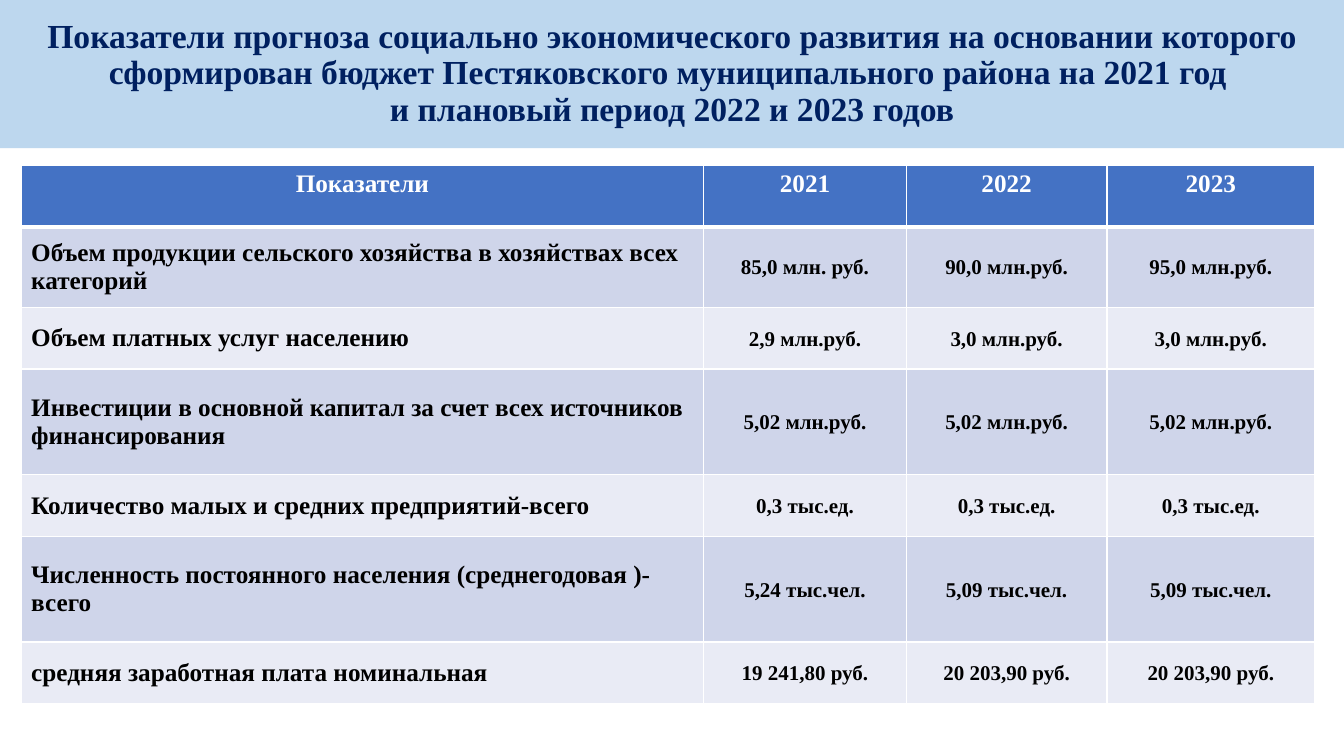
from dataclasses import dataclass

from lxml import etree
from pptx import Presentation
from pptx.dml.color import RGBColor
from pptx.enum.shapes import MSO_SHAPE
from pptx.enum.text import MSO_ANCHOR, PP_ALIGN
from pptx.oxml.ns import qn
from pptx.util import Inches, Pt

RECTANGLE = MSO_SHAPE.RECTANGLE
LEFT, CENTER = PP_ALIGN.LEFT, PP_ALIGN.CENTER
TOP, MIDDLE = MSO_ANCHOR.TOP, MSO_ANCHOR.MIDDLE


@dataclass(frozen=True)
class Theme:
    font: str = "Times New Roman"
    title_fill: str = "BDD7EE"
    title_text: str = "002060"
    header_fill: str = "4472C4"
    header_text: str = "FFFFFF"
    body_text: str = "000000"
    bands: tuple = ("CFD5EA", "E9EBF5")
    border: str = "FFFFFF"
    thin: float = 1
    thick: float = 3
    title_size: int = 24
    label_size: int = 18
    value_size: int = 15


THEME = Theme()

TITLE = (
    "Показатели прогноза социально экономического развития на основании которого "
    "сформирован бюджет Пестяковского муниципального района на 2021 год \v"
    "и плановый период 2022 и 2023 годов"
)
HEADER = ("Показатели", "2021", "2022", "2023")
INDICATORS = (
    ("Объем продукции сельского хозяйства в хозяйствах всех категорий",
     "85,0 млн. руб.", "90,0 млн.руб.", "95,0 млн.руб."),
    ("Объем платных услуг населению",
     "2,9 млн.руб.", "3,0 млн.руб.", "3,0 млн.руб."),
    ("Инвестиции в основной капитал за счет всех источников финансирования",
     "5,02 млн.руб.", "5,02 млн.руб.", "5,02 млн.руб."),
    ("Количество малых и средних предприятий-всего",
     "0,3 тыс.ед.", "0,3 тыс.ед.", "0,3 тыс.ед."),
    ("Численность постоянного населения (среднегодовая )-всего",
     "5,24 тыс.чел.", "5,09 тыс.чел.", "5,09 тыс.чел."),
    ("средняя заработная плата номинальная",
     "19 241,80 руб.", "20 203,90 руб.", "20 203,90 руб."),
)
COLUMN_WIDTHS = (6.77, 2.01, 1.99, 2.06)
ROW_HEIGHTS = (0.61, 0.8, 0.61, 1.05, 0.61, 1.05, 0.61)


def write_text(frame, text, size, color, align, line_spacing=None):
    frame.text = text
    paragraph = frame.paragraphs[0]
    paragraph.alignment = align
    if line_spacing:
        paragraph.line_spacing = line_spacing
    font = paragraph.font
    font.name = THEME.font
    font.size = Pt(size)
    font.bold = True
    font.color.rgb = RGBColor.from_string(color)


def add_title_band(slide, width):
    band = slide.shapes.add_shape(RECTANGLE, 0, 0, width, Inches(1.47))
    band.shadow.inherit = False
    band.fill.solid()
    band.fill.fore_color.rgb = RGBColor.from_string(THEME.title_fill)
    band.line.fill.background()
    band.text_frame.word_wrap = True
    band.text_frame.vertical_anchor = MIDDLE
    write_text(band.text_frame, TITLE, THEME.title_size, THEME.title_text, CENTER, 0.9)


def set_borders(cell, top, bottom):
    properties = cell._tc.get_or_add_tcPr()
    sides = {"a:lnL": THEME.thin, "a:lnR": THEME.thin, "a:lnT": top, "a:lnB": bottom}
    for side, width in sides.items():
        line = etree.SubElement(properties, qn(side), w=str(Pt(width)))
        fill = etree.SubElement(line, qn("a:solidFill"))
        etree.SubElement(fill, qn("a:srgbClr"), val=THEME.border)


def fill_cell(cell, color):
    cell.fill.solid()
    cell.fill.fore_color.rgb = RGBColor.from_string(color)


def format_header_cell(cell, text):
    set_borders(cell, THEME.thin, THEME.thick)
    fill_cell(cell, THEME.header_fill)
    cell.vertical_anchor = TOP
    write_text(cell.text_frame, text, THEME.label_size, THEME.header_text, CENTER)


def format_body_cell(cell, text, row, is_label):
    set_borders(cell, THEME.thick if row == 1 else THEME.thin, THEME.thin)
    fill_cell(cell, THEME.bands[(row - 1) % 2])
    cell.vertical_anchor = MIDDLE
    if is_label:
        write_text(cell.text_frame, text, THEME.label_size, THEME.body_text, LEFT)
    else:
        cell.margin_left = cell.margin_right = Inches(0.07)
        cell.margin_top = cell.margin_bottom = 0
        write_text(cell.text_frame, text, THEME.value_size, THEME.body_text, CENTER, 1.07)


def add_indicator_table(slide):
    table = slide.shapes.add_table(
        len(ROW_HEIGHTS), len(COLUMN_WIDTHS), Inches(0.21), Inches(1.64),
        Inches(sum(COLUMN_WIDTHS)), Inches(sum(ROW_HEIGHTS)),
    ).table
    for column, width in zip(table.columns, COLUMN_WIDTHS):
        column.width = Inches(width)
    for row, height in zip(table.rows, ROW_HEIGHTS):
        row.height = Inches(height)

    for column, text in enumerate(HEADER):
        format_header_cell(table.cell(0, column), text)
    for row, texts in enumerate(INDICATORS, start=1):
        for column, text in enumerate(texts):
            format_body_cell(table.cell(row, column), text, row, column == 0)


def main():
    presentation = Presentation()
    presentation.slide_width = Inches(13.33)
    presentation.slide_height = Inches(7.5)
    slide = presentation.slides.add_slide(presentation.slide_layouts[6])

    # Heading across the top
    add_title_band(slide, presentation.slide_width)
    # Forecast indicators by year
    add_indicator_table(slide)

    presentation.save("out.pptx")


if __name__ == "__main__":
    main()
